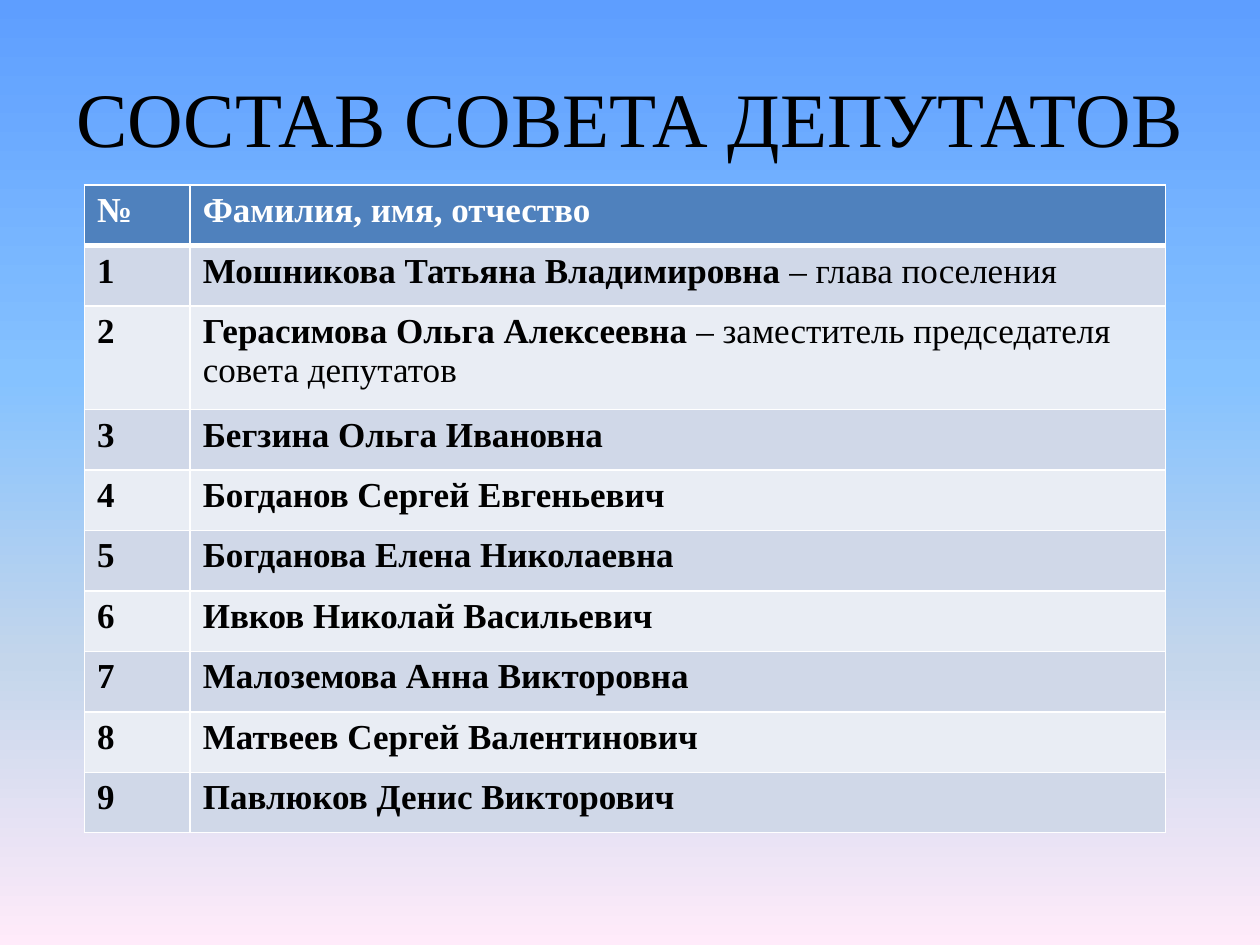
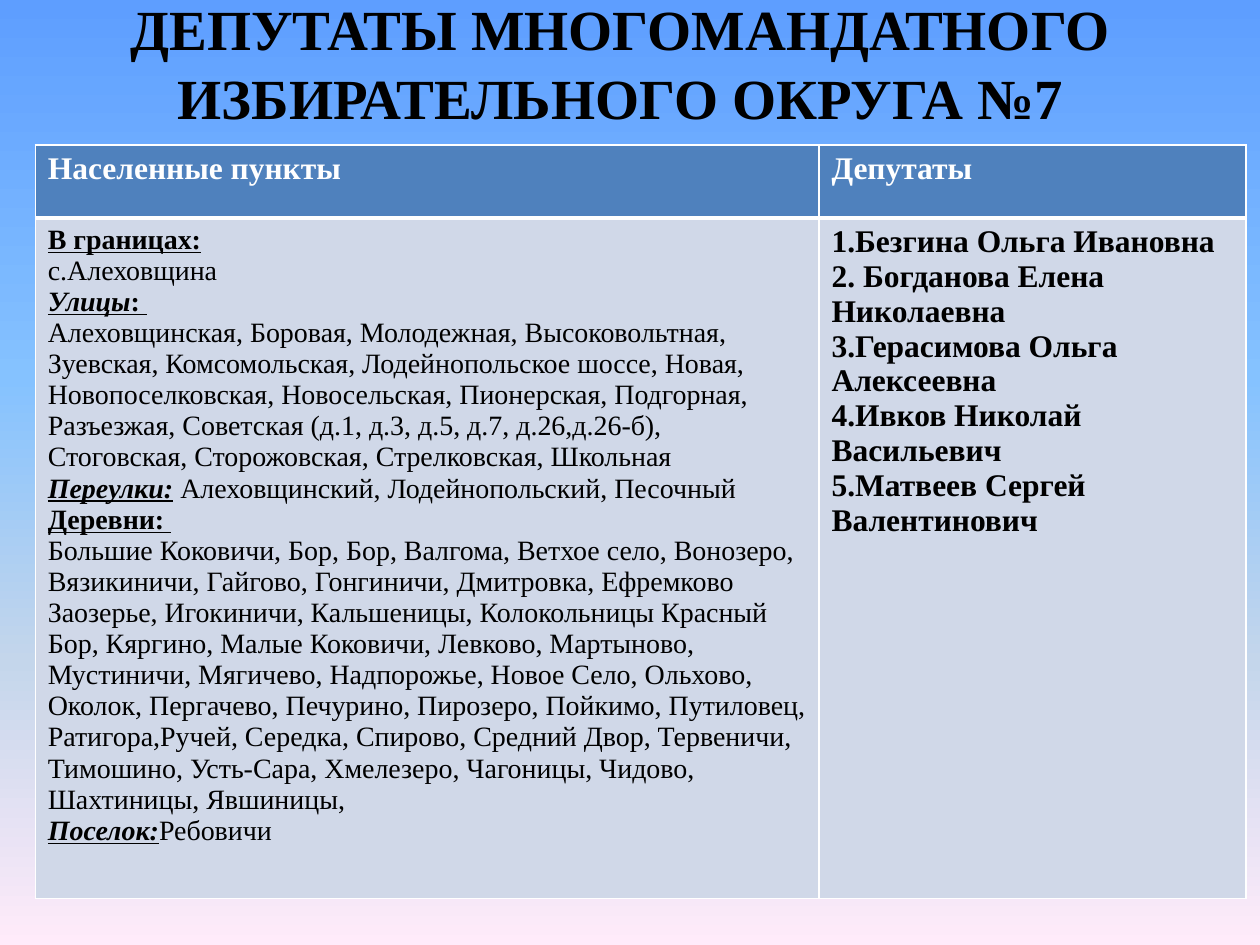
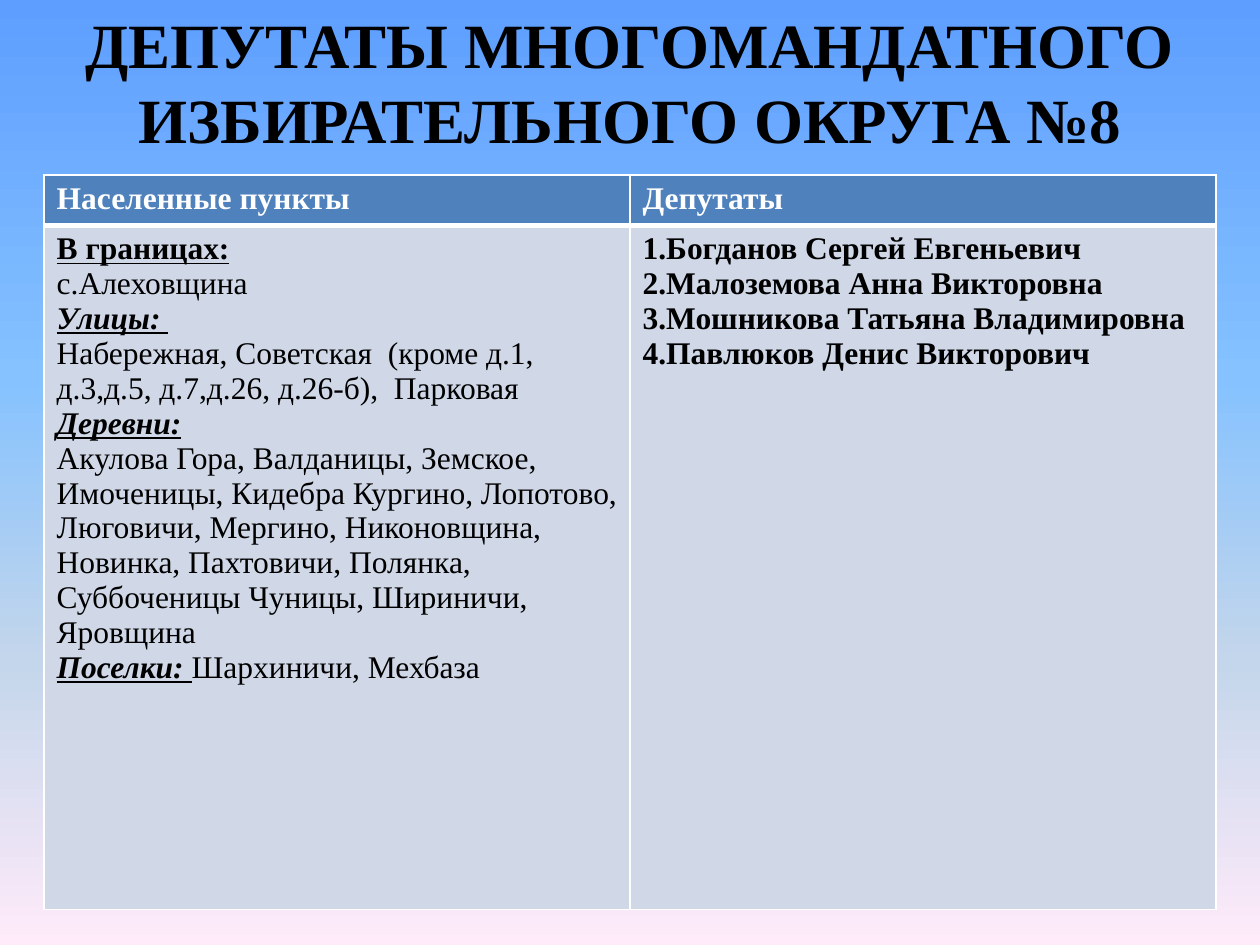
from lxml.etree import SubElement
from pptx import Presentation
from pptx.dml.color import RGBColor
from pptx.enum.text import MSO_ANCHOR, MSO_AUTO_SIZE, PP_ALIGN
from pptx.oxml.ns import qn
from pptx.util import Inches, Pt

FONT = "Times New Roman"
BLACK, WHITE, HEADER = "000000", "FFFFFF", "4F81BD"
BANDS = ["E9EDF4", "D0D8E8"]
SKY = [(0, "5E9EFF"), (40, "85C2FF"), (70, "C4D6EB"), (100, "FFEBFA")]
PLAIN, BOLD, UNDER, LABEL = "", "b", "bu", "biu"


def paint(fill, color):
    fill.solid()
    fill.fore_color.rgb = RGBColor.from_string(color)


def write_runs(paragraph, runs, size, color):
    for text, style in runs:
        run = paragraph.add_run()
        run.text = text
        formats = {
            "name": FONT,
            "size": Pt(size),
            "bold": "b" in style,
            "italic": "i" in style,
            "underline": "u" in style,
        }
        for attribute, value in formats.items():
            setattr(run.font, attribute, value)
        paint(run.font.fill, color)


members = [
    [("Мошникова Татьяна Владимировна ", BOLD), ("– глава поселения", PLAIN)],
    [("Герасимова Ольга Алексеевна ", BOLD),
     ("– заместитель председателя совета депутатов", PLAIN)],
    [("Бегзина Ольга Ивановна", BOLD)],
    [("Богданов Сергей Евгеньевич", BOLD)],
    [("Богданова Елена Николаевна", BOLD)],
    [("Ивков Николай Васильевич", BOLD)],
    [("Малоземова Анна Викторовна", BOLD)],
    [("Матвеев Сергей Валентинович", BOLD)],
    [("Павлюков Денис Викторович", BOLD)],
]

places_7 = [
    [("В границах:", UNDER)],
    [("с.Алеховщина", PLAIN)],
    [("Улицы", LABEL), (": ", UNDER)],
    [("Алеховщинская, Боровая, Молодежная, Высоковольтная, Зуевская, "
      "Комсомольская, Лодейнопольское шоссе, Новая, Новопоселковская, "
      "Новосельская, Пионерская, Подгорная, Разъезжая, Советская (д.1, д.3, "
      "д.5, д.7, д.26,д.26-б), Стоговская, Сторожовская, Стрелковская, "
      "Школьная", PLAIN)],
    [("Переулки:", LABEL), (" Алеховщинский, Лодейнопольский, Песочный", PLAIN)],
    [("Деревни: ", UNDER)],
    [("Большие Коковичи, Бор, Бор, Валгома, Ветхое село, Вонозеро, Вязикиничи, "
      "Гайгово, Гонгиничи, Дмитровка, Ефремково Заозерье, Игокиничи, "
      "Кальшеницы, Колокольницы Красный Бор, Кяргино, Малые Коковичи, Левково, "
      "Мартыново, Мустиничи, Мягичево, Надпорожье, Новое Село, Ольхово, Околок, "
      "Пергачево, Печурино, Пирозеро, Пойкимо, Путиловец, Ратигора,Ручей, "
      "Середка, Спирово, Средний Двор, Тервеничи, Тимошино, Усть-Сара, "
      "Хмелезеро, Чагоницы, Чидово, Шахтиницы, Явшиницы,", PLAIN)],
    [("Поселок:", LABEL), ("Ребовичи", PLAIN)],
]
deputies_7 = [
    "1.Безгина Ольга Ивановна",
    "2. Богданова Елена Николаевна",
    "3.Герасимова Ольга Алексеевна",
    "4.Ивков Николай Васильевич",
    "5.Матвеев Сергей Валентинович",
]

places_8 = [
    [("В границах:", UNDER)],
    [("с.Алеховщина", PLAIN)],
    [("Улицы: ", LABEL)],
    [("Набережная, Советская  (кроме д.1, д.3,д.5, д.7,д.26, д.26-б),  Парковая",
      PLAIN)],
    [("Деревни:", LABEL)],
    [("Акулова Гора, Валданицы, Земское, Имоченицы, Кидебра Кургино, Лопотово, "
      "Люговичи, Мергино, Никоновщина, Новинка, Пахтовичи, Полянка, "
      "Суббоченицы Чуницы, Шириничи, Яровщина", PLAIN)],
    [("Поселки: ", LABEL), ("Шархиничи, Мехбаза", PLAIN)],
]
deputies_8 = [
    "1.Богданов Сергей Евгеньевич",
    "2.Малоземова Анна Викторовна",
    "3.Мошникова Татьяна Владимировна",
    "4.Павлюков Денис Викторович",
]

district_title = "ДЕПУТАТЫ МНОГОМАНДАТНОГО ИЗБИРАТЕЛЬНОГО ОКРУГА №"
district_header = ["Населенные пункты", "Депутаты"]
pages = [
    {
        "title": "СОСТАВ СОВЕТА ДЕПУТАТОВ",
        "title_box": (0.5, 0.3, 9, 1.25),
        "title_size": 44, "title_style": PLAIN, "title_bottom": 0.05,
        "corner": (0.67, 1.47),
        "columns": [0.84, 7.74],
        "heights": [0.48, 0.48, 0.82] + [0.48] * 7,
        "header": ["№", "Фамилия, имя, отчество"], "header_size": 20,
        "sizes": [20, 20],
        "rows": [[[[(str(number), BOLD)]], [member]]
                 for number, member in enumerate(members, 1)],
    },
    {
        "title": district_title + "7",
        "title_box": (0.51, 0.13, 8.83, 1.25),
        "title_size": 32.4, "title_style": BOLD, "title_bottom": 0.57,
        "corner": (0.28, 1.15),
        "columns": [6.22, 3.39],
        "heights": [0.58, 5.4],
        "header": district_header, "header_size": 18,
        "sizes": [16, 18],
        "rows": [[places_7, [[(name, BOLD)] for name in deputies_7]]],
    },
    {
        "title": district_title + "8",
        "title_box": (0.5, 0.3, 9, 1.25),
        "title_size": 36, "title_style": BOLD, "title_bottom": 0.62,
        "corner": (0.35, 1.39),
        "columns": [4.65, 4.65],
        "heights": [0.4, 5.43],
        "header": district_header, "header_size": 18,
        "sizes": [18, 18],
        "rows": [[places_8, [[(name, BOLD)] for name in deputies_8]]],
    },
]

prs = Presentation()
prs.slide_width, prs.slide_height = Inches(10), Inches(7.5)

master = prs.slide_master
paint(master.background.fill, WHITE)
backdrop = master.element.find(".//" + qn("p:bgPr"))
backdrop.remove(backdrop[0])
gradient = SubElement(backdrop, qn("a:gradFill"), rotWithShape="1")
backdrop.insert(0, gradient)
stops = SubElement(gradient, qn("a:gsLst"))
for position, color in SKY:
    stop = SubElement(stops, qn("a:gs"), pos=str(position * 1000))
    SubElement(stop, qn("a:srgbClr"), val=color)
SubElement(gradient, qn("a:lin"), ang="5400000", scaled="0")

for page in pages:
    slide = prs.slides.add_slide(prs.slide_layouts[5])

    title = slide.shapes.title
    for side, length in zip(("left", "top", "width", "height"), page["title_box"]):
        setattr(title, side, Inches(length))
    frame_formats = {
        "word_wrap": True,
        "auto_size": MSO_AUTO_SIZE.NONE,
        "vertical_anchor": MSO_ANCHOR.MIDDLE,
        "margin_bottom": Inches(page["title_bottom"]),
    }
    for attribute, value in frame_formats.items():
        setattr(title.text_frame, attribute, value)
    heading = title.text_frame.paragraphs[0]
    heading.alignment = PP_ALIGN.CENTER
    write_runs(heading, [(page["title"], page["title_style"])],
               page["title_size"], BLACK)

    header = [[[(label, BOLD)]] for label in page["header"]]
    rows = [header] + page["rows"]
    left, top = page["corner"]
    table = slide.shapes.add_table(
        len(rows), len(page["columns"]), Inches(left), Inches(top),
        Inches(sum(page["columns"])), Inches(sum(page["heights"]))).table
    for column, width in zip(table.columns, page["columns"]):
        column.width = Inches(width)
    for row, height in zip(table.rows, page["heights"]):
        row.height = Inches(height)

    for row_index, contents in enumerate(rows):
        is_header = row_index == 0
        for column_index, paragraphs in enumerate(contents):
            cell = table.cell(row_index, column_index)
            size = page["header_size"] if is_header else page["sizes"][column_index]
            for index, runs in enumerate(paragraphs):
                text = cell.text_frame
                paragraph = text.add_paragraph() if index else text.paragraphs[0]
                write_runs(paragraph, runs, size, WHITE if is_header else BLACK)

            borders = {"L": 1, "R": 1,
                       "T": 3 if row_index == 1 else 1,
                       "B": 3 if is_header else 1}
            properties = cell._tc.get_or_add_tcPr()
            for side, points in borders.items():
                border = SubElement(properties, qn("a:ln" + side), w=str(Pt(points)))
                border_fill = SubElement(border, qn("a:solidFill"))
                SubElement(border_fill, qn("a:srgbClr"), val=WHITE)
            paint(cell.fill, HEADER if is_header else BANDS[row_index % 2])

prs.save("out.pptx")
